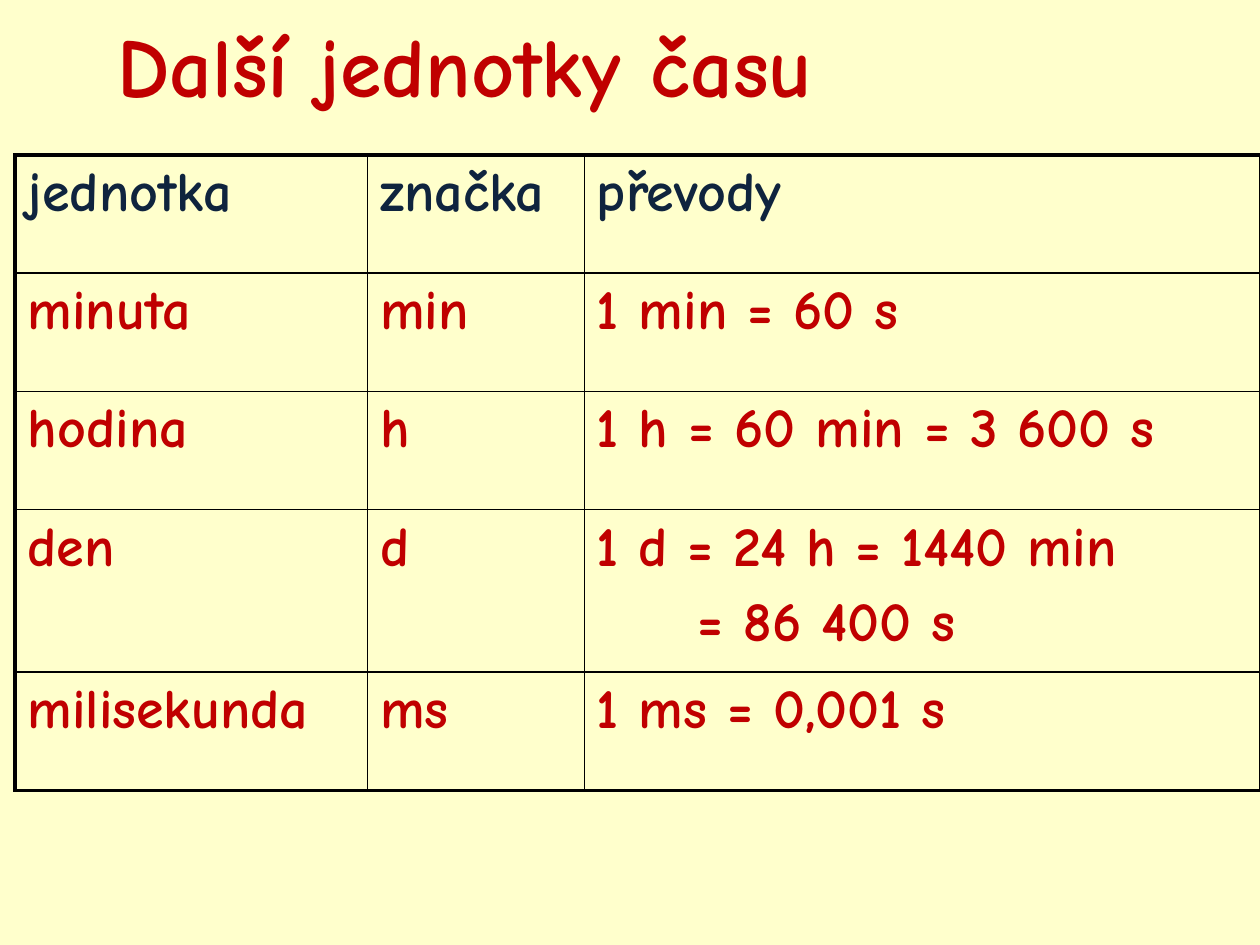
import pptx
import pptx.dml.color
import pptx.enum.text
import pptx.oxml.ns
import pptx.util
from lxml import etree

Pt = pptx.util.Pt


def color(hex_value):
    return pptx.dml.color.RGBColor.from_string(hex_value)


class UnitsSlide:
    font = "Comic Neue"
    red = "C00000"
    navy = "0F243E"
    border = "000000"
    thin, thick = 1, 2.25

    def __init__(self, presentation, background):
        self.slide = presentation.slides.add_slide(presentation.slide_layouts[5])
        self.slide.background.fill.solid()
        self.slide.background.fill.fore_color.rgb = color(background)

    def style(self, paragraph, size, hex_value):
        paragraph.alignment = pptx.enum.text.PP_ALIGN.LEFT
        for run in paragraph.runs:
            run.font.name = self.font
            run.font.size = Pt(size)
            run.font.bold = True
            run.font.color.rgb = color(hex_value)

    def title(self, wording, left, top, width, height):
        heading = self.slide.shapes.title
        heading.left, heading.top = Pt(left), Pt(top)
        heading.width, heading.height = Pt(width), Pt(height)
        heading.text_frame.text = wording
        heading.text_frame.vertical_anchor = pptx.enum.text.MSO_ANCHOR.MIDDLE
        self.style(heading.text_frame.paragraphs[0], 48, self.red)

    def edge(self, cell, side, width):
        qn = pptx.oxml.ns.qn
        line = etree.SubElement(cell._tc.get_or_add_tcPr(), qn(f"a:ln{side}"), w=str(Pt(width)))
        fill = etree.SubElement(line, qn("a:solidFill"))
        etree.SubElement(fill, qn("a:srgbClr"), val=self.border)

    def cell(self, cell, wording, hex_value, outer_sides):
        cell.text_frame.text = wording
        for index, paragraph in enumerate(cell.text_frame.paragraphs):
            paragraph.space_before = Pt(6.4)
            self.style(paragraph, 32, hex_value)
            if index:
                paragraph._p.get_or_add_pPr().set("marL", str(Pt(57.6)))
        for side in "LRTB":
            self.edge(cell, side, self.thick if side in outer_sides else self.thin)
        cell.fill.background()

    def table(self, rows, left, top, widths, heights):
        frame = self.slide.shapes.add_table(
            len(rows), len(widths), Pt(left), Pt(top), Pt(sum(widths)), Pt(sum(heights)))
        grid = frame.table
        grid.first_row = grid.horz_banding = False
        for column, width in zip(grid.columns, widths):
            column.width = Pt(width)
        for r, (wordings, height) in enumerate(zip(rows, heights)):
            grid.rows[r].height = Pt(height)
            for c, wording in enumerate(wordings):
                outer = {"L": c == 0, "R": c == len(widths) - 1,
                         "T": r == 0, "B": r == len(rows) - 1}
                self.cell(grid.cell(r, c), wording, self.red if r else self.navy,
                          [side for side, is_outer in outer.items() if is_outer])


def main():
    presentation = pptx.Presentation()
    presentation.slide_width, presentation.slide_height = Pt(720), Pt(540)
    units = UnitsSlide(presentation, "FFFFCC")
    units.title("Další jednotky času", 60, 0, 538.5, 73)
    conversions = [
        ("jednotka", "značka", "převody"),
        ("minuta", "min", "1 min = 60 s"),
        ("hodina", "h", "1 h = 60 min = 3 600 s"),
        ("den", "d", "1 d = 24 h = 1440 min\n= 86 400 s"),
        ("milisekunda", "ms", "1 ms = 0,001 s"),
    ]
    row_height = 67.5
    heights = [93 if "\n" in row[-1] else row_height for row in conversions]
    units.table(conversions, 8.6, 88.6, [201.5, 123.8, 386.6], heights)
    presentation.save("out.pptx")


if __name__ == "__main__":
    main()
